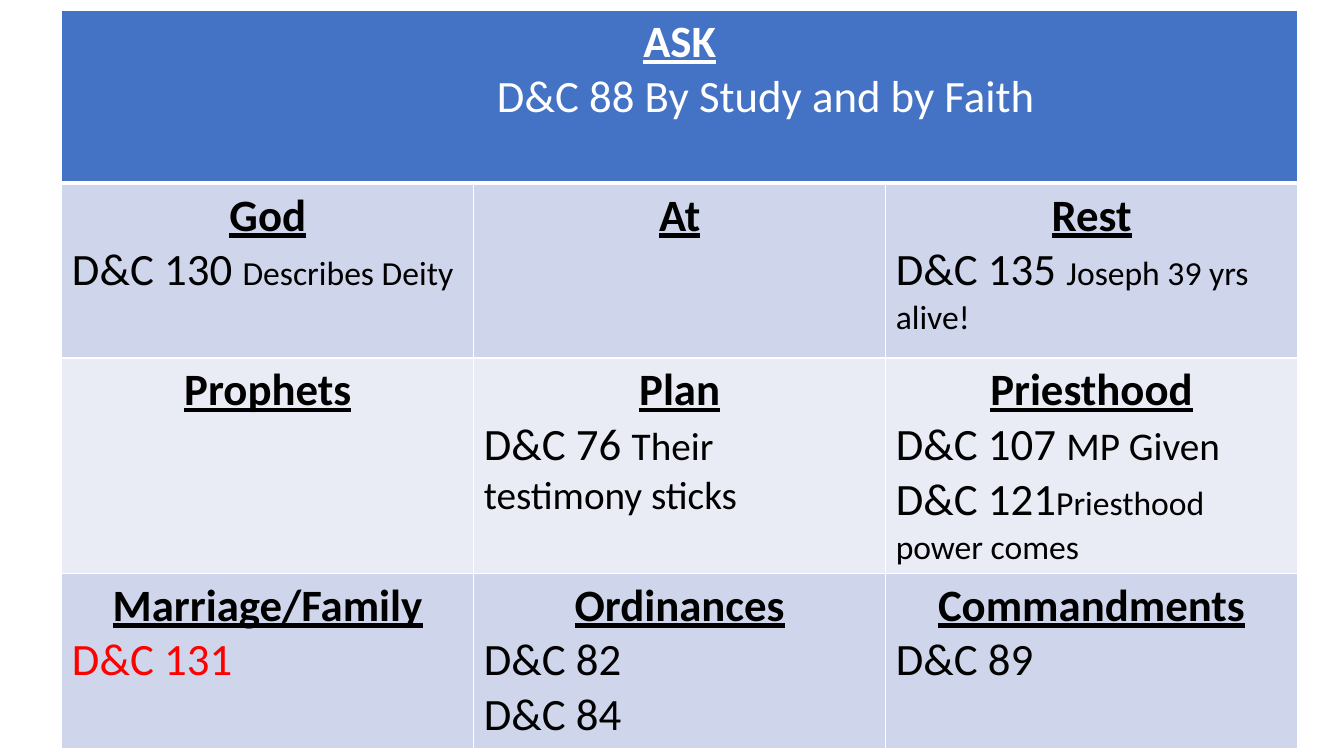
from lxml import etree
from pptx import Presentation
from pptx import util as u
from pptx.dml.color import RGBColor
from pptx.enum import text
from pptx.oxml.ns import qn

HEADER = ("ASK", [[("D&C 88 By Study and by Faith", 32)]])
TOPICS = [
    [("God", [[("D&C 130 ", 32), ("Describes Deity", 24)]]),
     ("At", []),
     ("Rest", [[("D&C 135 ", 32), ("Joseph 39 yrs alive!", 24)]])],
    [("Prophets", []),
     ("Plan", [[("D&C 76 ", 32), ("Their testimony sticks", 28)]]),
     ("Priesthood", [[("D&C 107 ", 32), ("MP Given", 28)],
                     [("D&C 121", 32), ("Priesthood power comes", 24)]])],
    [("Marriage/Family", [[("D&C 131", 32)]]),
     ("Ordinances", [[("D&C 82", 32)], [("D&C 84", 32)]]),
     ("Commandments", [[("D&C 89", 32)]])],
]
ROW_HEIGHTS = [4.37, 4.4, 5.42, 4.42]
BANDS = ["CFD5EA", "E9EBF5"]


def rgb(value):
    return RGBColor.from_string(value)


def add_run(p, content, size, color, bold=False):
    r = p.add_run()
    r.text = content
    r.font.color.rgb = rgb(color)
    formats = {"name": "Calibri", "size": u.Pt(size), "bold": bold, "underline": bold}
    for name, value in formats.items():
        setattr(r.font, name, value)


def style_cell(cell, fill, top=1, bottom=1):
    tcPr = cell._tc.get_or_add_tcPr()
    for side, width in {"L": 1, "R": 1, "T": top, "B": bottom}.items():
        ln = etree.SubElement(tcPr, qn(f"a:ln{side}"), w=str(u.Pt(width)))
        paint = etree.SubElement(ln, qn("a:solidFill"))
        etree.SubElement(paint, qn("a:srgbClr"), val="FFFFFF")
    cell.fill.solid()
    cell.fill.fore_color.rgb = rgb(fill)


def write_cell(cell, title, lines, title_color, line_color, indent=0):
    tf = cell.text_frame
    p = tf.paragraphs[0]
    p.alignment = text.PP_ALIGN.CENTER
    add_run(p, title, 32, title_color, bold=True)
    for line in lines:
        p = tf.add_paragraph()
        p.alignment = text.PP_ALIGN.LEFT
        if indent:
            p._p.get_or_add_pPr().set("marL", str(u.Cm(indent)))
        for content, size in line:
            add_run(p, content, size, line_color)


def add_topic_table(s, left, top, width):
    rows, cols = len(TOPICS) + 1, len(TOPICS[0])
    frame = s.shapes.add_table(rows, cols, u.Cm(left), u.Cm(top),
                               u.Cm(width), u.Cm(sum(ROW_HEIGHTS)))
    table = frame.table
    for row, height in zip(table.rows, ROW_HEIGHTS):
        row.height = u.Cm(height)
    for column in table.columns:
        column.width = u.Cm(width / cols)

    for col in range(cols):
        style_cell(table.cell(0, col), "4472C4", bottom=3)
    table.cell(0, 0).merge(table.cell(0, cols - 1))
    write_cell(table.cell(0, 0), *HEADER, "FFFFFF", "FFFFFF", indent=10.71)

    for i, topics in enumerate(TOPICS):
        for col, (title, lines) in enumerate(topics):
            cell = table.cell(i + 1, col)
            style_cell(cell, BANDS[i % 2], top=1 if i else 3)
            line_color = "FF0000" if title == "Marriage/Family" else "000000"
            write_cell(cell, title, lines, "000000", line_color)


def main():
    prs = Presentation()
    prs.slide_width, prs.slide_height = u.Cm(33.87), u.Cm(19.05)
    s = prs.slides.add_slide(prs.slide_layouts[6])
    add_topic_table(s, 1.56, 0.25, 31.14)
    prs.save("out.pptx")


if __name__ == "__main__":
    main()
